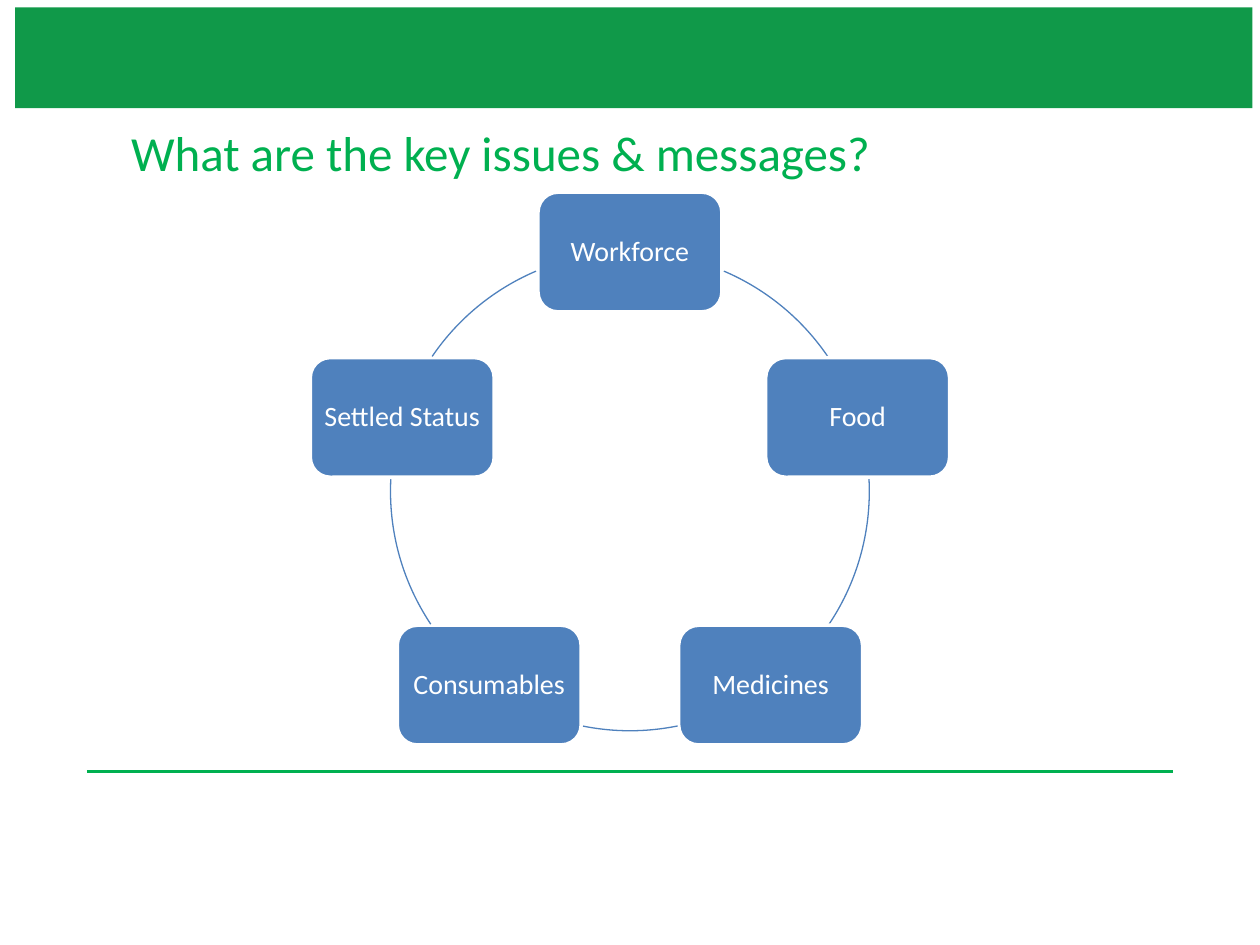
from dataclasses import dataclass
from math import cos, radians, sin

from lxml import etree
from pptx import Presentation
from pptx.dml.color import RGBColor
from pptx.enum import shapes as sh, text as tx
from pptx.oxml import ns
from pptx.util import Inches, Pt

GREEN, BLUE, WHITE = "00B050", "4F81BD", "FFFFFF"
MID_X, MID_Y, RADIUS = 5, 3.9, 1.9
WIDTH, HEIGHT = 1.46, 0.95


@dataclass
class Issue:
    """A box on the ring and the arc that follows it, in degrees."""
    label: str
    start: float
    end: float


ISSUES = [
    Issue("Workforce", 293.1, 325.7),
    Issue("Food", 357.1, 33.7),
    Issue("Medicines", 78.5, 101.5),
    Issue("Consumables", 146.3, 182.9),
    Issue("Settled Status", 214.3, 246.9),
]


def paint(item, color: str) -> None:
    """Give a fill a solid colour."""
    item.solid()
    item.fore_color.rgb = RGBColor.from_string(color)


def style(font, size: float, color: str) -> None:
    """Set the face, size and colour of a font."""
    font.name, font.size = "Calibri", Pt(size)
    paint(font.fill, color)


def add_title(slide, label: str) -> None:
    """Place and format the slide title."""
    title = slide.shapes.title
    title.left, title.top = Inches(0.94), Inches(0.92)
    title.width, title.height = Inches(8.3), Inches(0.57)
    frame = title.text_frame
    frame.text = label
    frame.vertical_anchor = tx.MSO_ANCHOR.TOP
    frame.auto_size = tx.MSO_AUTO_SIZE.SHAPE_TO_FIT_TEXT
    para = frame.paragraphs[0]
    para.alignment = tx.PP_ALIGN.LEFT
    style(para.font, 28, GREEN)


def add_band(slide) -> None:
    """Draw the band along the top."""
    band = slide.shapes.add_shape(
        sh.MSO_SHAPE.RECTANGLE, Inches(0.12), Inches(0.06), Inches(9.82), Inches(0.8))
    band.shadow.inherit = False
    paint(band.fill, "109949")
    band.line.fill.background()


def add_rule(slide) -> None:
    """Draw the line below the ring."""
    rule = slide.shapes.add_connector(
        sh.MSO_CONNECTOR.STRAIGHT, Inches(0.69), Inches(6.12), Inches(9.31), Inches(6.12))
    paint(rule.line.fill, GREEN)
    rule.line.width = Pt(1.75)
    etree.SubElement(rule._element.spPr, ns.qn("a:effectLst"))


def add_arc(slide, issue: Issue) -> None:
    """Draw the arc from an issue to the next one."""
    size = Inches(2 * RADIUS)
    arc = slide.shapes.add_shape(
        sh.MSO_SHAPE.ARC, Inches(MID_X - RADIUS), Inches(MID_Y - RADIUS), size, size)
    arc.adjustments[0] = issue.start * 0.6
    arc.adjustments[1] = issue.end * 0.6
    arc.shadow.inherit = False
    arc.fill.background()
    paint(arc.line.fill, BLUE)
    arc.line.width = Pt(0.75)


def add_box(slide, issue: Issue, angle: float) -> None:
    """Draw an issue centred on the ring at an angle."""
    left = MID_X + RADIUS * cos(radians(angle)) - WIDTH / 2
    top = MID_Y + RADIUS * sin(radians(angle)) - HEIGHT / 2
    box = slide.shapes.add_shape(
        sh.MSO_SHAPE.ROUNDED_RECTANGLE,
        Inches(left), Inches(top), Inches(WIDTH), Inches(HEIGHT))
    box.shadow.inherit = False
    paint(box.fill, BLUE)
    paint(box.line.fill, WHITE)
    box.line.width = Pt(2)
    frame = box.text_frame
    frame.text = issue.label
    frame.word_wrap = True
    frame.vertical_anchor = tx.MSO_ANCHOR.MIDDLE
    frame.margin_left = frame.margin_right = Inches(0.05)
    para = frame.paragraphs[0]
    para.alignment = tx.PP_ALIGN.CENTER
    para.line_spacing = 0.9
    style(para.font, 16, WHITE)


def main() -> None:
    """Build the slide and save it."""
    deck = Presentation()
    deck.slide_width, deck.slide_height = Inches(10), Inches(7.5)
    slide = deck.slides.add_slide(deck.slide_layouts[5])
    add_band(slide)
    add_rule(slide)
    add_title(slide, "What are the key issues & messages?")
    for i, issue in enumerate(ISSUES):
        add_box(slide, issue, 360 / len(ISSUES) * i - 90)
        add_arc(slide, issue)
    deck.save("out.pptx")


if __name__ == "__main__":
    main()
